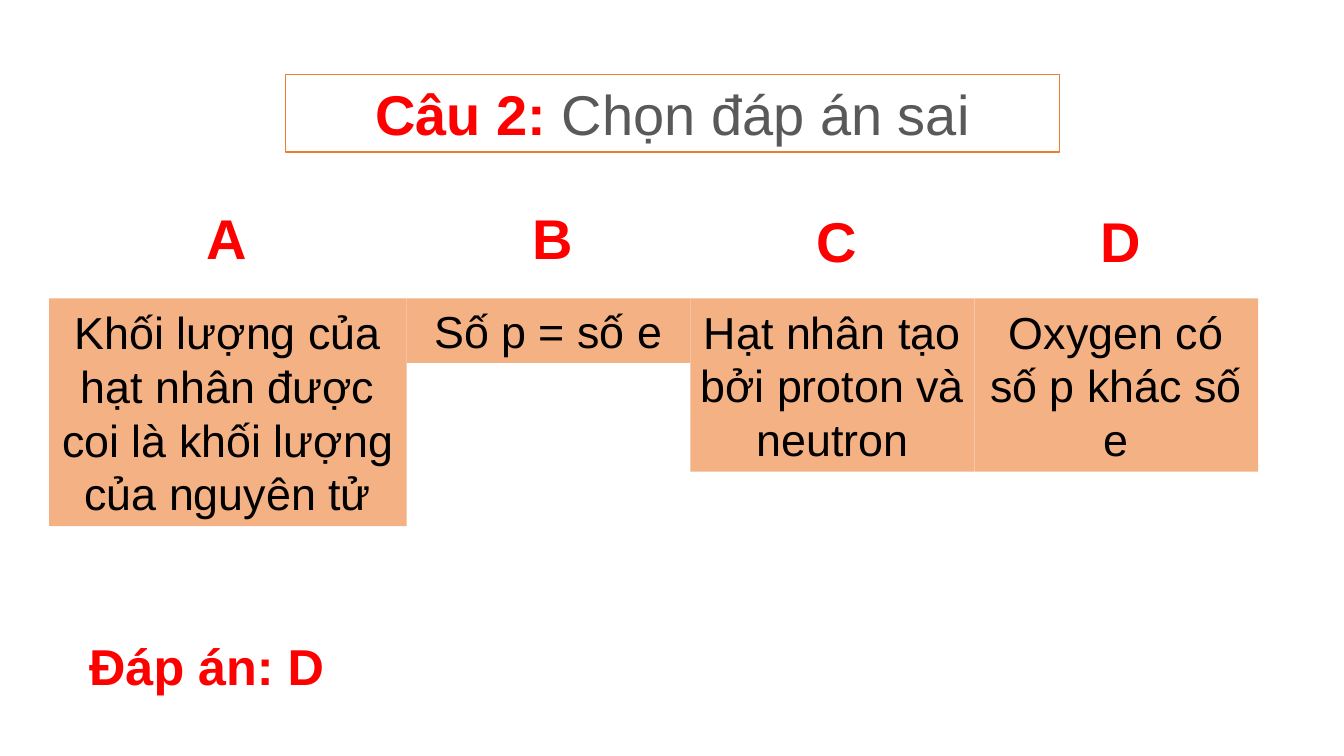
"""Build a quiz slide with four answer choices."""
from pptx import Presentation
from pptx.dml.color import RGBColor
from pptx.enum.shapes import MSO_SHAPE
from pptx.enum.text import MSO_ANCHOR, PP_ALIGN
from pptx.util import Pt

TITLE = ["Câu 2: ", "Chọn đáp án sai"]
ANSWER = "Đáp án: D"
CHOICES = [
    {"mark": "A", "text": "Khối lượng của hạt nhân được coi là khối lượng của nguyên tử",
     "wide": 255.4, "lines": 4, "top": 141.8, "shift": -0.6},
    {"mark": "B", "text": "Số p = số e",
     "wide": 202.7, "lines": 1, "top": 141.8, "shift": 3.2},
    {"mark": "C", "text": "Hạt nhân tạo bởi proton và neutron",
     "wide": 202.7, "lines": 3, "top": 144, "shift": 3.2},
    {"mark": "D", "text": "Oxygen có số p khác số e",
     "wide": 202.7, "lines": 3, "top": 144, "shift": 3.2},
]
THEME = {
    "font": "Arial", "red": "FF0000", "gray": "595959", "black": "000000",
    "peach": "F4B183", "white": "FFFFFF", "edge": "ED7D31",
    "head": 40, "body": 32, "note": 36,
}
LEFT, TOP, LINE, PAD, MARK = 35.1, 213.1, 38.88, 3.6, 144.7


def color(name):
    return RGBColor.from_string(THEME[name])


def write(shape, parts, size, looks):
    frame = shape.text_frame
    frame.word_wrap = True
    para = frame.paragraphs[0]
    para.alignment = PP_ALIGN.CENTER
    for part, (tint, bold) in zip(parts, looks):
        run = para.add_run()
        run.text = part
        run.font.name = THEME["font"]
        run.font.size = Pt(THEME[size])
        run.font.bold = bold
        run.font.color.rgb = color(tint)


def add_box(slide, area, fill, edge=None):
    box = slide.shapes.add_shape(MSO_SHAPE.RECTANGLE, *map(Pt, area))
    box.shadow.inherit = False
    box.fill.solid()
    box.fill.fore_color.rgb = color(fill)
    if edge:
        box.line.color.rgb = color(edge)
        box.line.width = Pt(1)
    else:
        box.line.fill.background()
    box.text_frame.vertical_anchor = MSO_ANCHOR.MIDDLE
    return box


def add_text(slide, area, text, size):
    label = slide.shapes.add_textbox(*map(Pt, area))
    write(label, [text], size, [("red", True)])
    return label


def main():
    deck = Presentation()
    deck.slide_width, deck.slide_height = Pt(960), Pt(540)
    slide = deck.slides.add_slide(deck.slide_layouts[6])

    left = LEFT
    for item in CHOICES:
        wide = item["wide"]
        mid = left + wide / 2 + item["shift"]
        add_text(slide, (mid - MARK / 2, item["top"], MARK, 55.4), item["mark"], "head")
        high = item["lines"] * LINE + 2 * PAD
        box = add_box(slide, (left, TOP, wide, high), "peach")
        write(box, [item["text"]], "body", [("black", False)])
        left += wide

    title = add_box(slide, (203.8, 53.3, 553, 55.4), "white", "edge")
    write(title, TITLE, "head", [("red", True), ("gray", False)])

    frame = add_text(slide, (49, 453.6, 197.3, 43.9), ANSWER, "note").text_frame
    frame.margin_left = frame.margin_right = Pt(0)
    frame.margin_top = frame.margin_bottom = Pt(0)
    deck.save("out.pptx")


if __name__ == "__main__":
    main()
